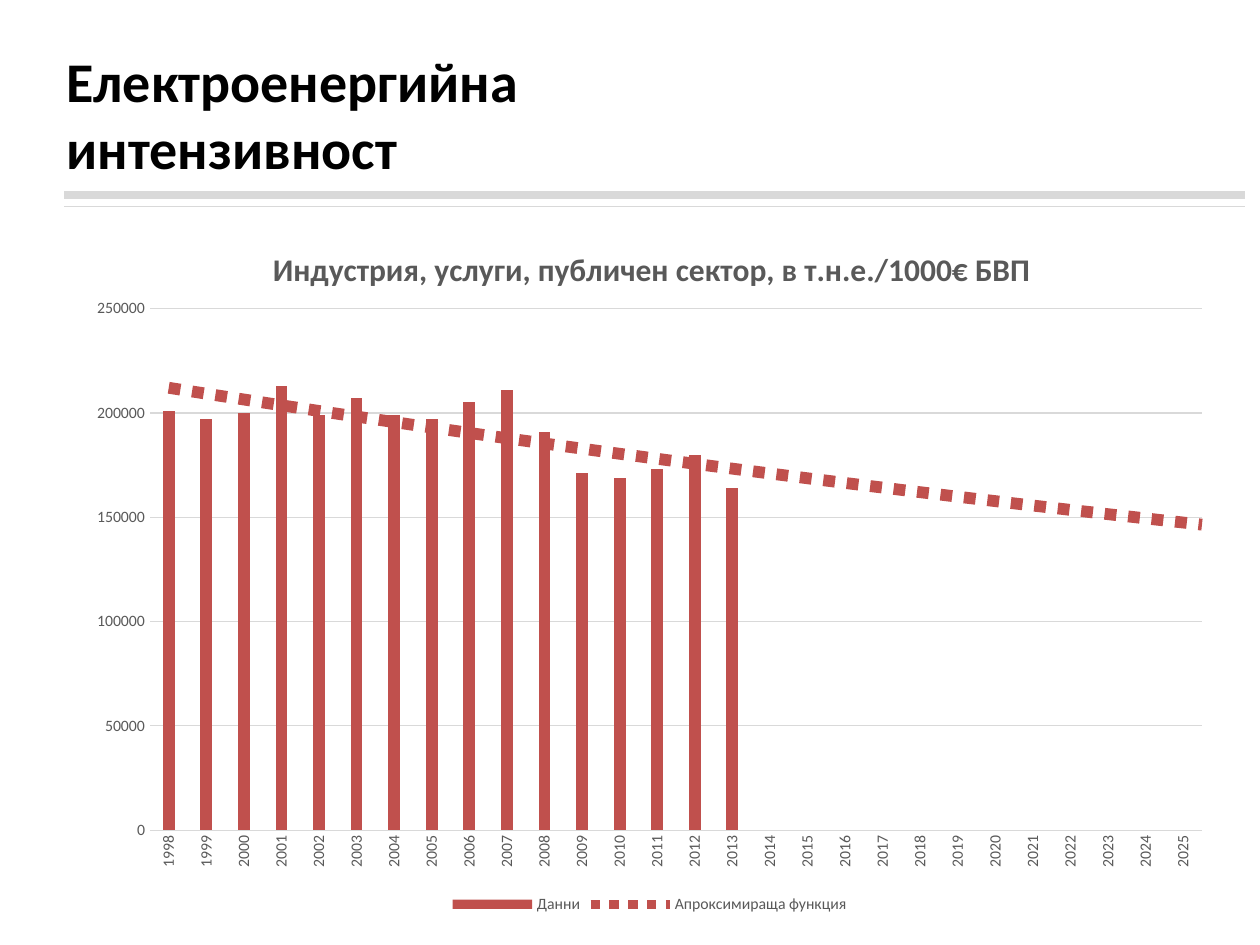
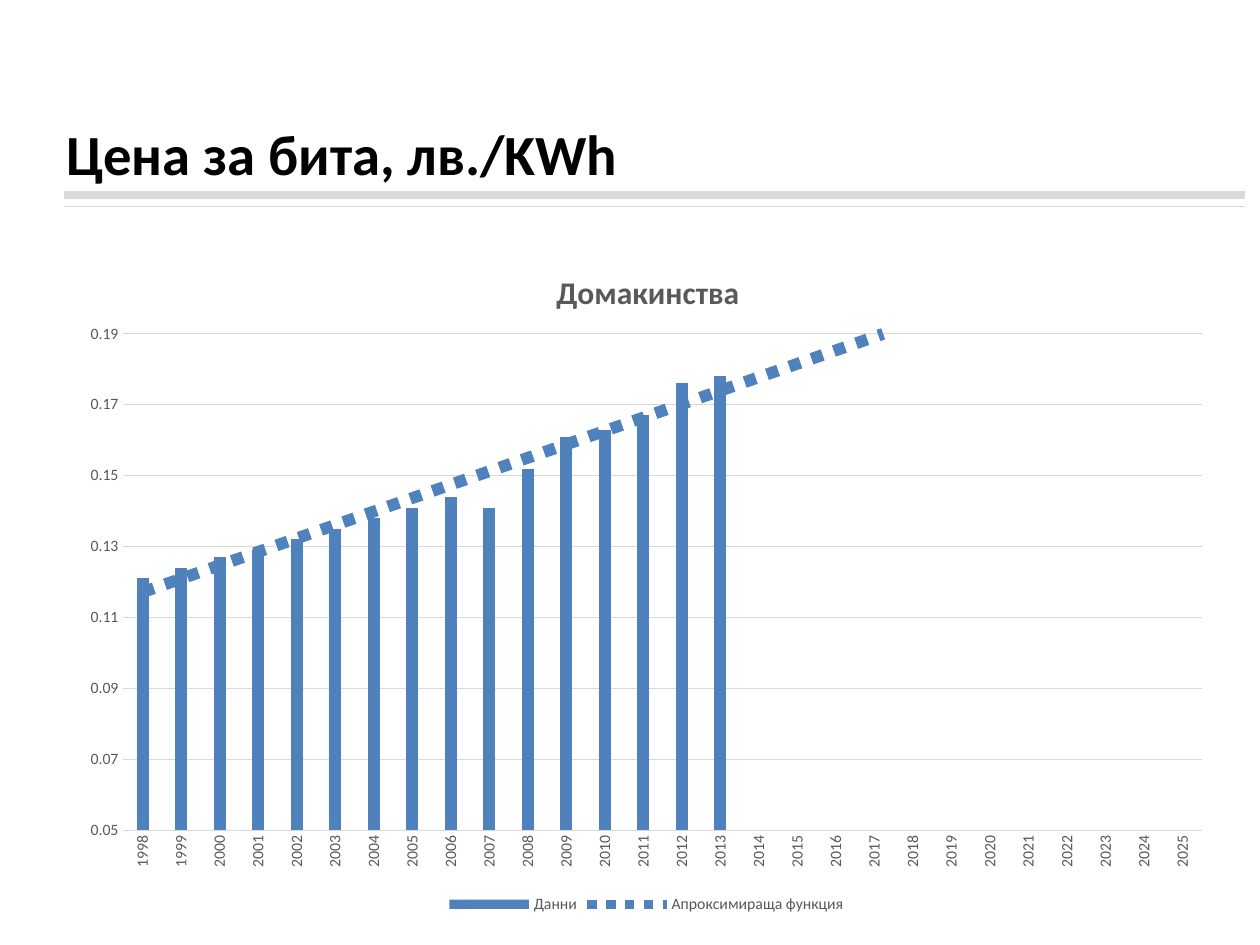
from pptx import Presentation
from pptx.chart.data import CategoryChartData as Data
from pptx.dml.color import RGBColor as Rgb
from pptx.enum.chart import XL_CHART_TYPE as Kind, XL_LEGEND_POSITION as Spot, XL_TICK_MARK as Tick
from pptx.enum.shapes import MSO_CONNECTOR as Link
from pptx.enum.text import MSO_ANCHOR as Anchor
from pptx.oxml import parse_xml
from pptx.oxml.ns import nsdecls, qn
from pptx.util import Inches, Pt

THEME = {
    "face": "Calibri", "ink": "000000", "text": "595959", "rule": "D9D9D9",
    "red": "C0504D", "blue": "4F81BD",
    "label": 9, "head": 18, "trend": 6.75, "grid": 0.75,
}
YEARS = [str(y) for y in range(1998, 2026)]
RULES = [(1.55, 4.5), (1.64, 0.25)]

SLIDES = [
    {
        "title": "Електроенергийна\vинтензивност", "size": 32,
        "box": (0.43, 0.44, 6.78, 0.92),
        "frame": (0.59, 1.7, 9.13, 5.59),
        "plot": (1.19, 2.45, 8.35, 4.14),
        "head": "Индустрия, услуги, публичен сектор, в т.н.е./1000€ БВП",
        "spot": (2.12, 1.92),
        "hue": "red", "fit": "exp", "form": "General",
        "scale": {"minimum_scale": 0, "maximum_scale": 250000, "major_unit": 50000},
        "vals": [201000, 197000, 200000, 213000, 199000, 207000, 199000, 197000,
                 205000, 211000, 191000, 171000, 169000, 173000, 180000, 164000],
    },
    {
        "title": "Цена за бита, лв./KWh", "size": 32.4,
        "box": (0.43, 0.84, 4.8, 0.74),
        "frame": (0.53, 1.86, 9.2, 5.43),
        "plot": (0.98, 2.65, 8.56, 3.94),
        "head": "Домакинства",
        "spot": (4.37, 2.1),
        "hue": "blue", "fit": "linear", "form": "0.00",
        "scale": {"minimum_scale": 0.05, "maximum_scale": 0.19, "major_unit": 0.02},
        "vals": [0.121, 0.124, 0.127, 0.129, 0.132, 0.135, 0.138, 0.141,
                 0.144, 0.141, 0.152, 0.161, 0.163, 0.167, 0.176, 0.178],
    },
]


def style(font, size, hue, bold=False):
    look = {"name": THEME["face"], "size": Pt(size), "bold": bold}
    for key, val in look.items():
        setattr(font, key, val)
    font.color.rgb = Rgb.from_string(THEME[hue])


def layout(frame, area, inner=False):
    left, top, wide, high = frame
    parts = [("x", (area[0] - left) / wide), ("y", (area[1] - top) / high)]
    if inner:
        parts += [("w", area[2] / wide), ("h", area[3] / high)]
    body = '<c:layoutTarget val="inner"/>' if inner else ""
    body += "".join(f'<c:{k}Mode val="edge"/>' for k in "xy")
    body += "".join(f'<c:{k} val="{v:.4f}"/>' for k, v in parts)
    return parse_xml(f'<c:layout {nsdecls("c")}><c:manualLayout>{body}</c:manualLayout></c:layout>')


deck = Presentation()
deck.slide_width, deck.slide_height = Inches(10), Inches(7.5)

for item in SLIDES:
    page = deck.slides.add_slide(deck.slide_layouts[6])
    for y, width in RULES:
        rule = page.shapes.add_connector(Link.STRAIGHT, Inches(0.51), Inches(y), Inches(9.88), Inches(y))
        rule.line.width = Pt(width)
        rule.line.color.rgb = Rgb.from_string(THEME["rule"])
        rule._element.spPr.append(parse_xml(f'<a:effectLst {nsdecls("a")}/>'))

    text = page.shapes.add_textbox(*map(Inches, item["box"])).text_frame
    for key, val in {"word_wrap": True, "vertical_anchor": Anchor.MIDDLE, "text": item["title"]}.items():
        setattr(text, key, val)
    style(text.paragraphs[0].font, item["size"], "ink", True)

    data = Data()
    data.categories = YEARS
    data.add_series("Данни", item["vals"] + [None] * (len(YEARS) - len(item["vals"])))
    chart = page.shapes.add_chart(Kind.COLUMN_CLUSTERED, *map(Inches, item["frame"]), data).chart
    style(chart.font, THEME["label"], "text")

    head = chart.chart_title
    head.text_frame.text = item["head"]
    style(head.text_frame.paragraphs[0].runs[0].font, THEME["head"], "text", True)
    head.include_in_layout = False
    name = chart._chartSpace.chart.find(qn("c:title"))
    for old in name.findall(qn("c:layout")):
        name.remove(old)
    name.find(qn("c:tx")).addnext(layout(item["frame"], item["spot"]))

    area = chart._chartSpace.chart.plotArea
    for old in area.findall(qn("c:layout")):
        area.remove(old)
    area.insert(0, layout(item["frame"], item["plot"], True))

    chart.has_legend = True
    chart.legend.position = Spot.BOTTOM
    chart.legend.include_in_layout = False
    style(chart.legend.font, THEME["label"], "text")

    cats, vals = chart.category_axis, chart.value_axis
    for axis in (cats, vals):
        axis.major_tick_mark = axis.minor_tick_mark = Tick.NONE
        style(axis.tick_labels.font, THEME["label"], "text")
    for key, val in item["scale"].items():
        setattr(vals, key, val)
    vals.tick_labels.number_format = item["form"]
    vals.tick_labels.number_format_is_linked = False
    vals.format.line.fill.background()
    for line in (cats.format.line, vals.major_gridlines.format.line):
        line.width = Pt(THEME["grid"])
        line.color.rgb = Rgb.from_string(THEME["rule"])
    cats._element.find(qn("c:txPr")).find(qn("a:bodyPr")).set("rot", "-5400000")

    plot = chart.plots[0]
    for key, val in {"gap_width": 219, "overlap": -27, "vary_by_categories": False}.items():
        setattr(plot, key, val)
    bars = plot.series[0]
    hue = THEME[item["hue"]]
    bars.format.fill.solid()
    bars.format.fill.fore_color.rgb = Rgb.from_string(hue)
    bars.invert_if_negative = False
    trend = parse_xml(
        f'<c:trendline {nsdecls("c", "a")}><c:name>Апроксимираща функция</c:name>'
        f'<c:spPr><a:ln w="{Pt(THEME["trend"])}"><a:solidFill><a:srgbClr val="{hue}"/></a:solidFill>'
        f'<a:prstDash val="sysDot"/></a:ln></c:spPr><c:trendlineType val="{item["fit"]}"/>'
        '<c:forward val="12"/><c:dispRSqr val="0"/><c:dispEq val="0"/></c:trendline>')
    bars._element.find(qn("c:cat")).addprevious(trend)

deck.save("out.pptx")
